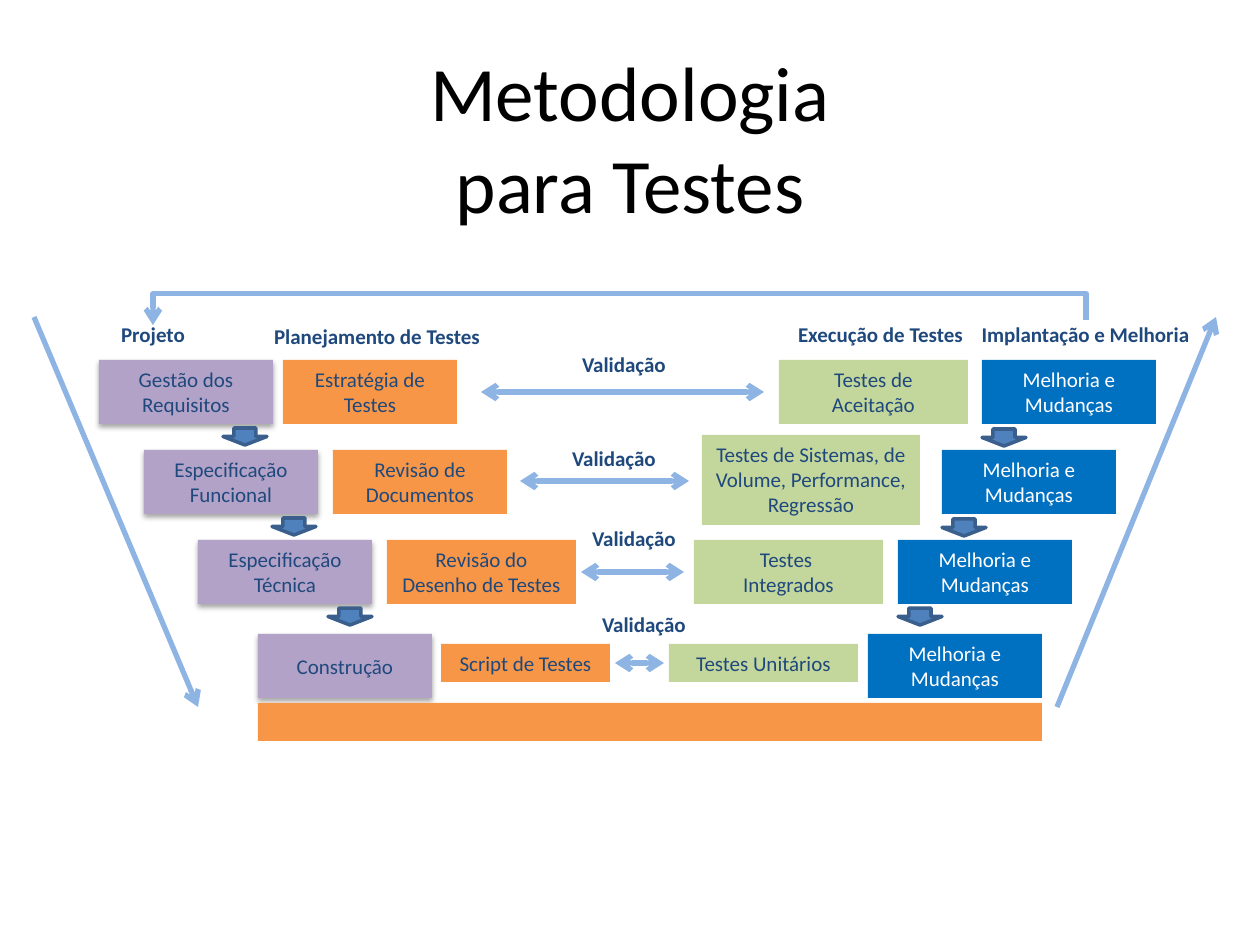
from lxml.etree import SubElement
from pptx import Presentation
from pptx.dml.color import RGBColor
from pptx.enum.shapes import MSO_CONNECTOR, MSO_SHAPE
from pptx.enum.text import MSO_ANCHOR, MSO_AUTO_SIZE, PP_ALIGN
from pptx.oxml.ns import qn
from pptx.util import Pt

PX = 914400 / 126
FONT = "Calibri"
COLORS = {
    "purple": "B3A2C7", "orange": "F79646", "green": "C3D69B",
    "blue": "0070C0", "white": "FFFFFF", "black": "000000",
    "navy": "1F497D", "line": "8EB4E3", "arrow": "4F81BD", "edge": "3A5F8C",
}
ROWS = (360, 450, 540, 634)
CARD = (174, 64)

DESIGN = [
    (99, "Gestão dos Requisitos"), (144, "Especificação Funcional"),
    (198, "Especificação Técnica"), (258, "Construção"),
]
PLANS = [
    (283, 360, 174, 64, "Estratégia de Testes"),
    (333, 450, 174, 64, "Revisão de Documentos"),
    (387, 540, 189, 64, "Revisão do Desenho de Testes"),
    (441, 644, 169, 38, "Script de Testes"),
]
TESTS = [
    (779, 360, 189, 64, "Testes de Aceitação"),
    (702, 435, 218, 90, "Testes de Sistemas, de Volume, Performance, Regressão"),
    (694, 540, 189, 64, "Testes \nIntegrados"),
    (669, 644, 189, 38, "Testes Unitários"),
]
CHANGES = (982, 942, 898, 868)
STEPS = [(223, 428), (272, 518), (328, 608), (982, 429), (942, 519), (898, 608)]
HEADS = [
    (49, 315, 208, "Projeto"), (249, 317, 256, "Planejamento de Testes"),
    (774, 315, 213, "Execução de Testes"), (942, 315, 287, "Implantação e Melhoria"),
]
CHECKS = [(566, 345, 116), (556, 439, 116), (576, 519, 116), (580, 605, 128)]
LINKS = [(481, 764, 392), (520, 689, 481), (581, 684, 572), (615, 664, 663)]


def emu(*values):
    return [round(v * PX) for v in values]


def color(name):
    return RGBColor.from_string(COLORS[name])


def write(shape, text, ink="navy", size=12, bold=False):
    frame = shape.text_frame
    frame.word_wrap = True
    for i, part in enumerate(text.split("\n")):
        para = frame.add_paragraph() if i else frame.paragraphs[0]
        para.alignment = PP_ALIGN.CENTER
        run = para.add_run()
        run.text = part
        style(run, ink, size, bold)
    return frame


def style(run, ink, size, bold=False):
    font = run.font
    font.name, font.size, font.bold = FONT, Pt(size), bold
    font.color.rgb = color(ink)


def add_box(slide, box, fill, kind=MSO_SHAPE.RECTANGLE):
    shape = slide.shapes.add_shape(kind, *emu(*box))
    shape.shadow.inherit = False
    shape.fill.solid()
    shape.fill.fore_color.rgb = color(fill)
    shape.line.fill.background()
    return shape


def add_card(slide, box, fill, text, ink="navy"):
    frame = write(add_box(slide, box, fill), text, ink)
    frame.vertical_anchor = MSO_ANCHOR.TOP
    frame.auto_size = MSO_AUTO_SIZE.SHAPE_TO_FIT_TEXT


def add_raised(slide, box, text):
    """Add a purple card with a soft shadow below it."""
    shape = add_box(slide, box, "purple")
    write(shape, text).vertical_anchor = MSO_ANCHOR.MIDDLE
    effects = shape._element.spPr.find(qn("a:effectLst"))
    shade = SubElement(effects, qn("a:outerShdw"), blurRad="40000",
                       dist="23000", dir="5400000", rotWithShape="0")
    tint = SubElement(shade, qn("a:srgbClr"), val=COLORS["black"])
    SubElement(tint, qn("a:alpha"), val="35000")


def add_label(slide, left, top, width, text):
    label = slide.shapes.add_textbox(*emu(left, top, width, 38))
    frame = write(label, text, bold=True)
    frame.auto_size = MSO_AUTO_SIZE.SHAPE_TO_FIT_TEXT


def add_step(slide, left, top):
    shape = add_box(slide, (left, top, 44, 17), "arrow", MSO_SHAPE.DOWN_ARROW)
    shape.line.color.rgb = color("edge")
    shape.line.width = Pt(2)


def add_line(slide, ends, both=False, kind=MSO_CONNECTOR.STRAIGHT):
    line = slide.shapes.add_connector(kind, *emu(*ends))
    line.line.color.rgb = color("line")
    line.line.width = Pt(3)
    stroke = line.line._get_or_add_ln()
    for tag in ("a:headEnd", "a:tailEnd") if both else ("a:tailEnd",):
        SubElement(stroke, qn(tag), type="arrow")
    SubElement(line._element.spPr, qn("a:effectLst"))
    return line


def add_return(slide):
    """Add the elbow line from the last phase back to the first."""
    line = add_line(slide, (622, 789, 617, -144), kind=MSO_CONNECTOR.ELBOW)
    props = line._element.spPr
    props.find(qn("a:xfrm")).set("rot", "16200000")
    guides = props.find(qn("a:prstGeom")).get_or_add_avLst()
    SubElement(guides, qn("a:gd"), name="adj1", fmla="val -529000")


def set_title(slide):
    title = slide.shapes.title
    title.left, title.top, title.width, title.height = emu(63, 38, 1134, 158)
    frame = title.text_frame
    frame.auto_size = MSO_AUTO_SIZE.NONE
    frame.vertical_anchor = MSO_ANCHOR.TOP
    para = frame.paragraphs[0]
    para.alignment = PP_ALIGN.CENTER
    for i, text in enumerate(("Metodologia", "para Testes")):
        if i:
            para.add_line_break()
        run = para.add_run()
        run.text = text
        style(run, "black", 44)


def main():
    deck = Presentation()
    deck.slide_width, deck.slide_height = emu(1260, 945)
    slide = deck.slides.add_slide(deck.slide_layouts[5])
    set_title(slide)
    for head in HEADS:
        add_label(slide, *head)
    for (left, text), top in zip(DESIGN, ROWS):
        add_raised(slide, (left, top, *CARD), text)
    for fill, cards in (("orange", PLANS), ("green", TESTS)):
        for *box, text in cards:
            add_card(slide, box, fill, text)
    for left, top in zip(CHANGES, ROWS):
        add_card(slide, (left, top, *CARD), "blue", "Melhoria e Mudanças", "white")
    for step in STEPS:
        add_step(slide, *step)
    add_return(slide)
    add_box(slide, (258, 703, 784, 38), "orange")
    add_line(slide, (34, 317, 198, 707))
    add_line(slide, (1057, 707, 1216, 317))
    for check in CHECKS:
        add_label(slide, *check, "Validação")
    for left, right, y in LINKS:
        add_line(slide, (left, y, right, y), both=True)
    deck.save("out.pptx")


if __name__ == "__main__":
    main()
